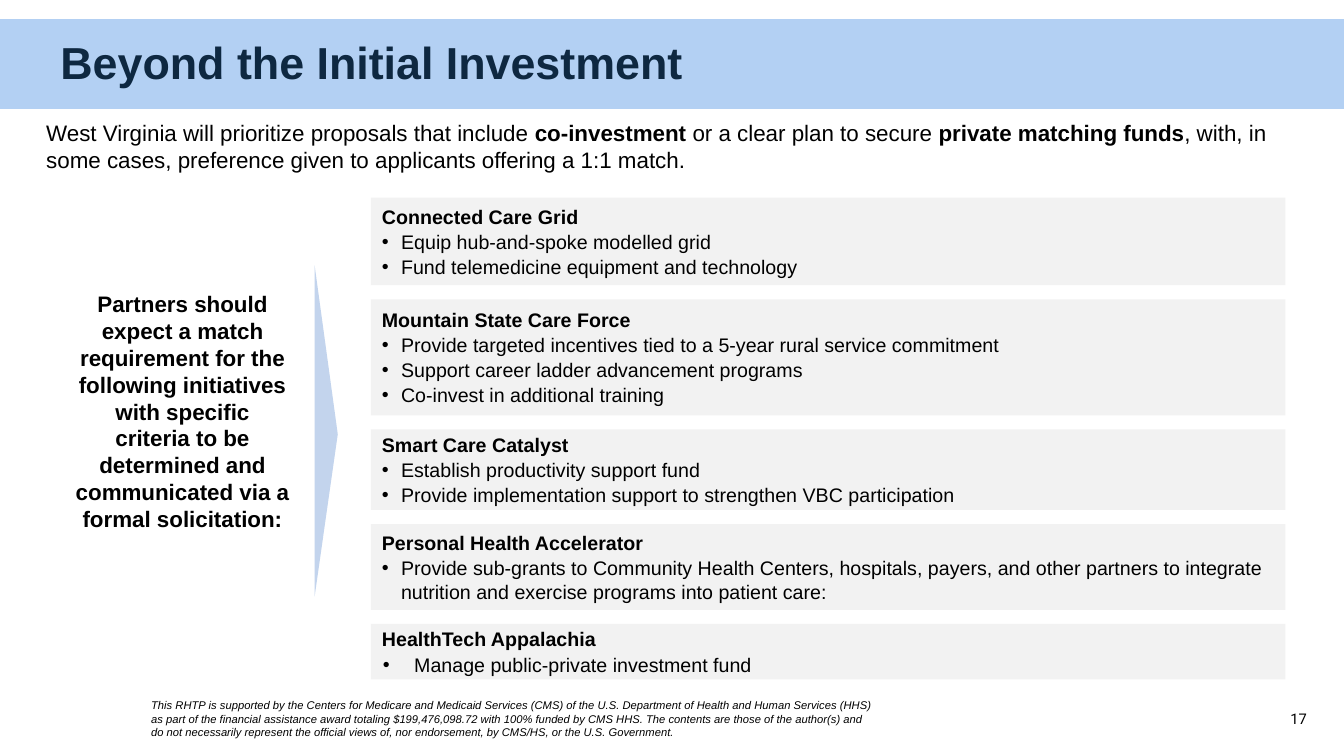
from lxml import etree
from pptx import Presentation
from pptx.dml.color import RGBColor
from pptx.enum.shapes import MSO_SHAPE as Shape
from pptx.enum.text import MSO_ANCHOR as Anchor, PP_ALIGN as Align
from pptx.oxml.ns import qn
from pptx.util import Pt

PX = 9144  # 100 px to the inch
BLACK = RGBColor(0x00, 0x00, 0x00)
NAVY = RGBColor(0x0E, 0x28, 0x41)
BAND_BLUE = RGBColor(0xB3, 0xD0, 0xF3)
ARROW_BLUE = RGBColor(0xC3, 0xD4, 0xED)
PANEL_GRAY = RGBColor(0xF2, 0xF2, 0xF2)

presentation = Presentation()
presentation.slide_width = 1333 * PX
presentation.slide_height = 750 * PX
slide = presentation.slides.add_slide(presentation.slide_layouts[6])


def add_filled(kind, left, top, width, height, color):
    shape = slide.shapes.add_shape(kind, left * PX, top * PX, width * PX, height * PX)
    shape.shadow.inherit = False
    shape.fill.solid()
    shape.fill.fore_color.rgb = color
    shape.line.fill.background()
    return shape


def add_text(left, top, width, height, pieces, size, color=BLACK, font="Arial", anchor=Anchor.TOP):
    """Add a one-paragraph text box from (text, bold) pieces and return the paragraph."""
    box = slide.shapes.add_textbox(left * PX, top * PX, width * PX, height * PX)
    box.text_frame.word_wrap = True
    box.text_frame.vertical_anchor = anchor
    paragraph = box.text_frame.paragraphs[0]
    paragraph.font.size = Pt(size)
    paragraph.font.name = font
    paragraph.font.color.rgb = color
    for text, bold in pieces:
        run = paragraph.add_run()
        run.text = text
        run.font.bold = bold
    return paragraph


# Title band, introduction and footer
add_filled(Shape.RECTANGLE, 0, 19, 1333, 89, BAND_BLUE)
title = add_text(50, 19, 1261, 90, [("Beyond the Initial Investment", True)], 32,
                 color=NAVY, anchor=Anchor.MIDDLE)
title.line_spacing = 0.9

add_text(36, 113, 1261, 64, [
    ("West Virginia will prioritize proposals that include ", False),
    ("co-investment", True),
    (" or a clear plan to secure ", False),
    ("private matching funds", True),
    (", with, in some cases, preference given to applicants offering a 1:1 match.", False),
], 16)

disclaimer = add_text(140, 688, 742, 50, [(
    "This RHTP is supported by the Centers for Medicare and Medicaid Services (CMS) of the "
    "U.S. Department of Health and Human Services (HHS) as part of the financial assistance "
    "award totaling $199,476,098.72 with 100% funded by CMS HHS. The contents are those of "
    "the author(s) and do not necessarily represent the official views of, nor endorsement, "
    "by CMS/HS, or the U.S. Government.", False)], 8)
disclaimer.font.italic = True

page_number = add_text(995, 693, 311, 40, [("17", False)], 10.5, font="Roboto",
                       anchor=Anchor.MIDDLE)
page_number.alignment = Align.RIGHT

# Match requirement and the arrow towards the initiatives
requirement = add_text(65, 283, 232, 279, [(
    "Partners should expect a match requirement for the following initiatives with specific "
    "criteria to be determined and communicated via a formal solicitation:", True)], 16)
requirement.alignment = Align.CENTER

arrow = add_filled(Shape.ISOSCELES_TRIANGLE, 159, 416, 329, 23, ARROW_BLUE)
arrow.adjustments[0] = 0.51
arrow.rotation = 90

# Initiative panels: name, height, bullet text indent, hanging indent, bullets
INITIATIVES = [
    ("Connected Care Grid", 87, 20, 19, [
        "Equip hub-and-spoke modelled grid",
        "Fund telemedicine equipment and technology"]),
    ("Mountain State Care Force", 115, 20, 19, [
        "Provide targeted incentives tied to a 5-year rural service commitment",
        "Support career ladder advancement programs",
        "Co-invest in additional training"]),
    ("Smart Care Catalyst", 80, 20, 19, [
        "Establish productivity support fund",
        "Provide implementation support to strengthen VBC participation"]),
    ("Personal Health Accelerator", 85, 20, 19, [
        "Provide sub-grants to Community Health Centers, hospitals, payers, and other partners "
        "to integrate nutrition and exercise programs into patient care:"]),
    ("HealthTech Appalachia", 55, 33, 31, [
        "Manage public-private investment fund"]),
]
PANEL_GAP = 14
panel_top = 196
for name, height, indent, hanging, bullets in INITIATIVES:
    panel = add_filled(Shape.RECTANGLE, 368, panel_top, 907, height, PANEL_GRAY)
    frame = panel.text_frame
    frame.word_wrap = True
    frame.vertical_anchor = Anchor.MIDDLE
    frame.margin_left = frame.margin_right = frame.margin_top = frame.margin_bottom = 10 * PX
    for index, text in enumerate([name] + bullets):
        is_bullet = index > 0
        paragraph = frame.add_paragraph() if is_bullet else frame.paragraphs[0]
        paragraph.text = text
        paragraph.alignment = Align.LEFT
        properties = paragraph._p.get_or_add_pPr()
        properties.set("marL", str((indent if is_bullet else 1) * PX))
        if is_bullet:
            properties.set("indent", str(-hanging * PX))
            etree.SubElement(properties, qn("a:buFont")).set("typeface", "Arial")
            etree.SubElement(properties, qn("a:buChar")).set("char", "•")
            paragraph.space_before = Pt(1.1)
        paragraph.font.size = Pt(14)
        paragraph.font.name = "Arial"
        paragraph.font.bold = not is_bullet
        paragraph.font.color.rgb = BLACK
    panel_top += height + PANEL_GAP

presentation.save("out.pptx")
